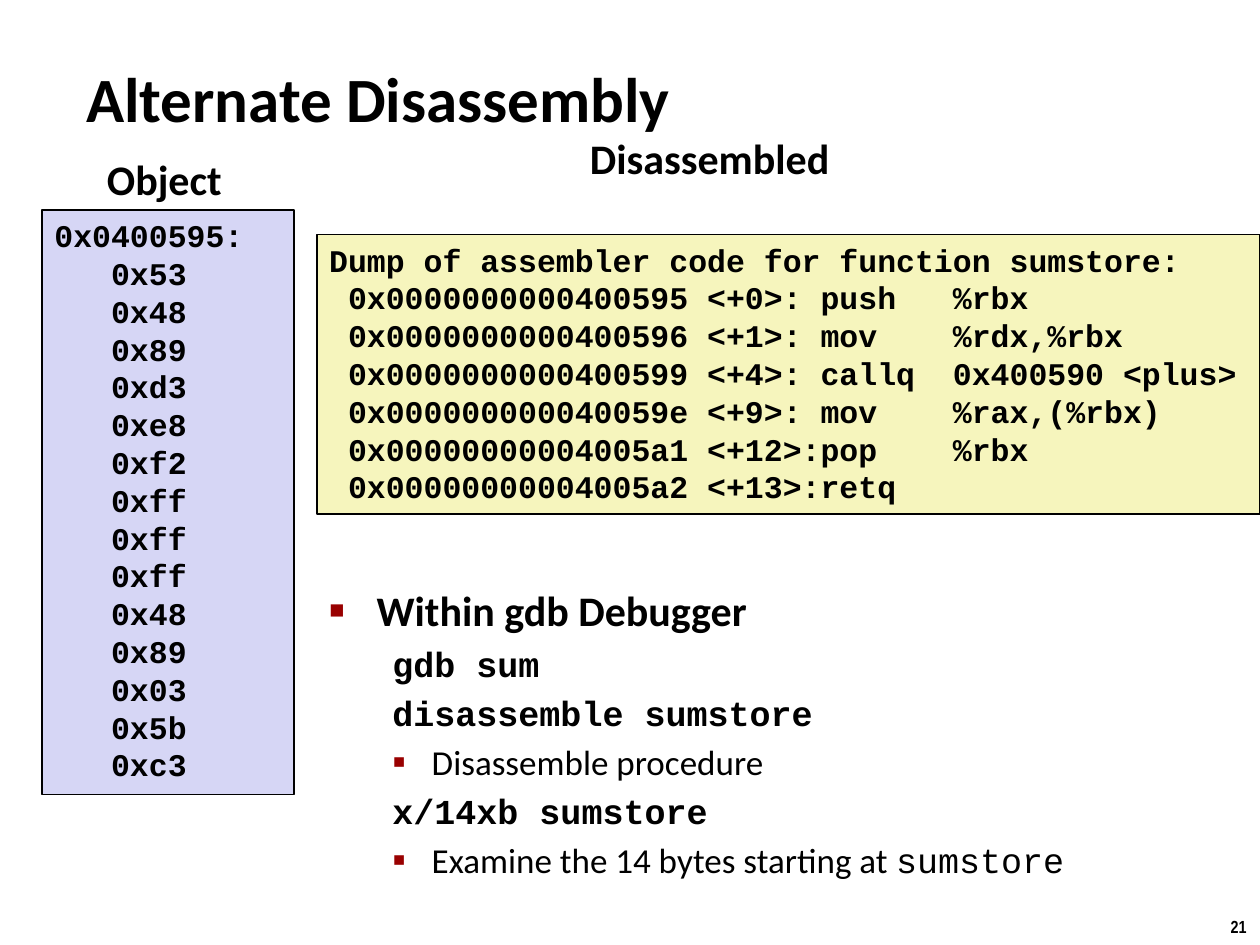
from lxml import etree
from pptx import Presentation
from pptx import util as u
from pptx.dml.color import RGBColor
from pptx.enum import shapes, text
from pptx.oxml.ns import qn

COLORS = {
    "ink": "000000",
    "bullet": "990000",
    "object": "D6D6F5",
    "assembly": "F6F5BD",
}
SANS, MONO, NARROW = "Calibri", "Courier New", "Arial Narrow"

OBJECT_BYTES = "53 48 89 d3 e8 f2 ff ff ff 48 89 03 5b c3".split()
ASSEMBLY = """Dump of assembler code for function sumstore:
 0x0000000000400595 <+0>: push   %rbx
 0x0000000000400596 <+1>: mov    %rdx,%rbx
 0x0000000000400599 <+4>: callq  0x400590 <plus>
 0x000000000040059e <+9>: mov    %rax,(%rbx)
 0x00000000004005a1 <+12>:pop    %rbx
 0x00000000004005a2 <+13>:retq"""

# level, bullet (character, size in percent), runs (text, font, bold)
SQUARE, SMALL_SQUARE = ("■", 60), ("▪", 110)
DEBUGGER_STEPS = [
    (0, SQUARE, [("Within gdb Debugger", SANS, True)]),
    (1, None, [("gdb sum", MONO, True)]),
    (1, None, [("disassemble sumstore", MONO, True)]),
    (1, SMALL_SQUARE, [("Disassemble procedure", SANS, False)]),
    (1, None, [("x/14xb sumstore", MONO, True)]),
    (1, SMALL_SQUARE, [("Examine the 14 bytes starting at ", SANS, False),
                       ("sumstore", MONO, False)]),
]
LEVEL_SIZES = (24, 20)
LEVEL_INDENTS = ((27, -27), (58.5, -22.5))  # left margin, first line


def rgb(name):
    return RGBColor.from_string(COLORS[name])


def set_indent(paragraph, left, first):
    properties = paragraph._p.get_or_add_pPr()
    properties.set("marL", str(u.Pt(left)))
    properties.set("indent", str(u.Pt(first)))


def set_bullet(paragraph, bullet):
    properties = paragraph._p.get_or_add_pPr()
    if bullet is None:
        etree.SubElement(properties, qn("a:buNone"))
        return
    character, percent = bullet
    color = etree.SubElement(properties, qn("a:buClr"))
    etree.SubElement(color, qn("a:srgbClr"), val=COLORS["bullet"])
    etree.SubElement(properties, qn("a:buSzPct"), val=str(percent * 1000))
    etree.SubElement(properties, qn("a:buChar"), char=character)


class SlideBuilder:
    def __init__(self, slide):
        self.slide = slide

    def style_run(self, run, size, font, bold=True):
        run.font.size = u.Pt(size)
        run.font.name = font
        run.font.bold = bold
        run.font.color.rgb = rgb("ink")

    def fill_frame(self, frame, content, size, font, align=text.PP_ALIGN.LEFT):
        frame.text = content
        for paragraph in frame.paragraphs:
            paragraph.alignment = align
            for run in paragraph.runs:
                self.style_run(run, size, font)

    def place(self, shape, box):
        shape.left, shape.top, shape.width, shape.height = map(u.Pt, box)
        shape.text_frame.auto_size = text.MSO_AUTO_SIZE.NONE

    def title(self, box, content):
        shape = self.slide.shapes.title
        self.place(shape, box)
        shape.text_frame.vertical_anchor = text.MSO_ANCHOR.MIDDLE
        self.fill_frame(shape.text_frame, content, 36, SANS)

    def label(self, box, content, size=24, font=SANS,
              align=text.PP_ALIGN.LEFT, wrap=True):
        shape = self.slide.shapes.add_textbox(*map(u.Pt, box))
        shape.text_frame.word_wrap = wrap
        self.fill_frame(shape.text_frame, content, size, font, align)

    def code_box(self, box, content, fill):
        shape = self.slide.shapes.add_shape(
            shapes.MSO_SHAPE.RECTANGLE, *map(u.Pt, box))
        shape.shadow.inherit = False
        shape.fill.solid()
        shape.fill.fore_color.rgb = rgb(fill)
        shape.line.color.rgb = rgb("ink")
        shape.line.width = u.Pt(1)
        frame = shape.text_frame
        frame.word_wrap = True
        frame.vertical_anchor = text.MSO_ANCHOR.TOP
        self.fill_frame(frame, content, 18, MONO)

    def bullet_list(self, box, items):
        shape = self.slide.placeholders[1]
        self.place(shape, box)
        frame = shape.text_frame
        for index, (level, bullet, runs) in enumerate(items):
            paragraph = frame.add_paragraph() if index else frame.paragraphs[0]
            size = LEVEL_SIZES[level]
            paragraph.level = level
            paragraph.space_before = u.Pt(0.2 * size if index else 0)
            set_indent(paragraph, *LEVEL_INDENTS[level])
            set_bullet(paragraph, bullet)
            for content, font, bold in runs:
                run = paragraph.add_run()
                run.text = content
                self.style_run(run, size, font, bold)


def main():
    presentation = Presentation()
    presentation.slide_width, presentation.slide_height = u.Pt(720), u.Pt(540)
    builder = SlideBuilder(
        presentation.slides.add_slide(presentation.slide_layouts[1]))

    builder.title((42, 33, 492, 45), "Alternate Disassembly")
    builder.label((330, 72, 205, 32.5), "Disassembled")
    builder.code_box((181, 134, 539, 160), ASSEMBLY, "assembly")
    builder.bullet_list((181, 330.5, 496, 177), DEBUGGER_STEPS)
    builder.label((54, 84, 103, 32.5), "Object")
    object_lines = ["0x0400595:"] + [f"   0x{byte}" for byte in OBJECT_BYTES]
    builder.code_box((24, 120, 144, 334), "\n".join(object_lines), "object")
    builder.label((695.5, 520, 24.5, 19.5), "21", 10, NARROW,
                  text.PP_ALIGN.CENTER, wrap=False)

    presentation.save("out.pptx")


if __name__ == "__main__":
    main()
